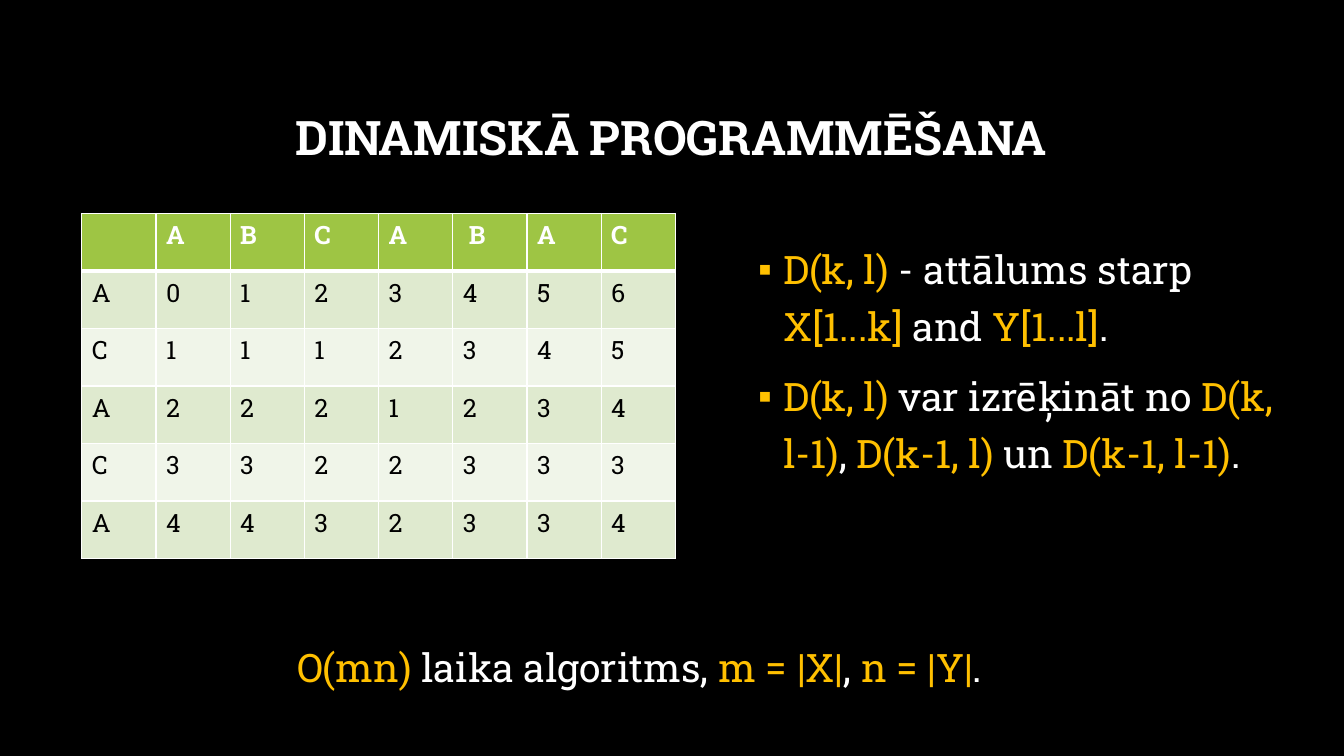
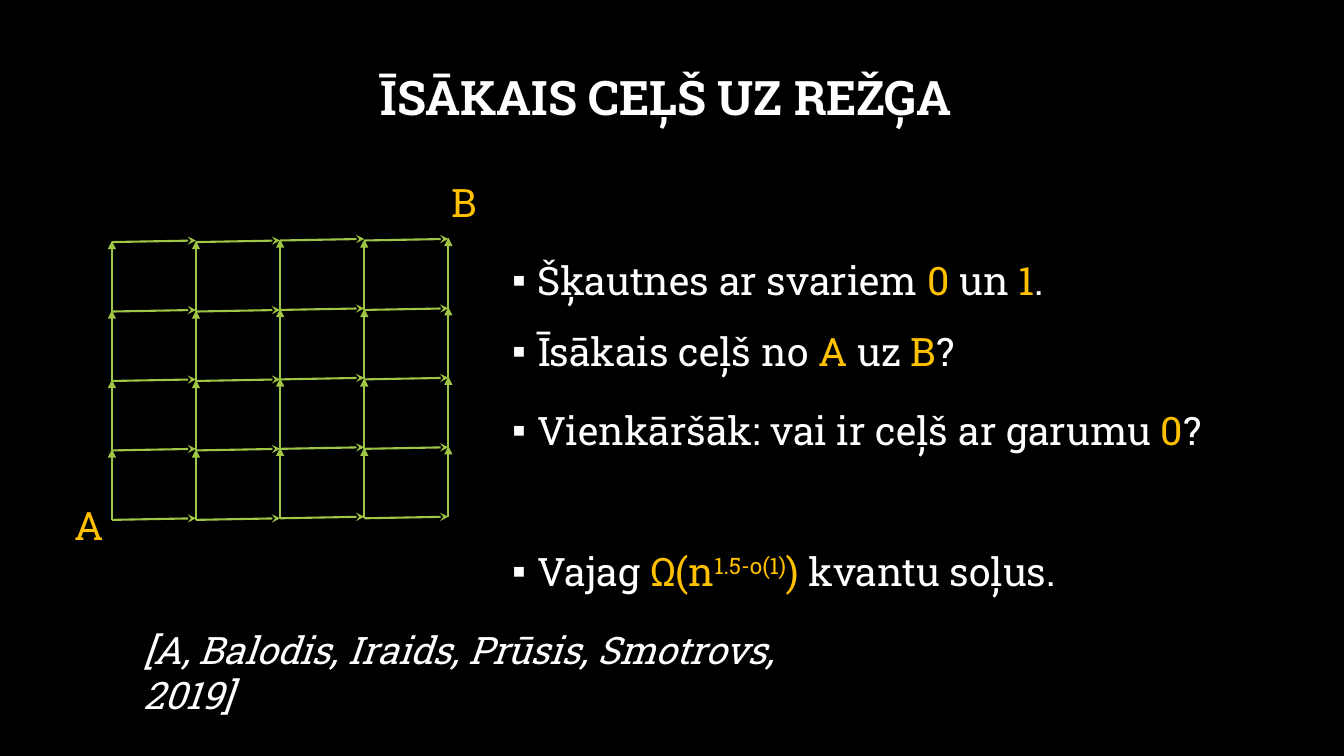
from dataclasses import dataclass
from itertools import product

from lxml.etree import SubElement
from pptx import Presentation
from pptx.dml.color import RGBColor
from pptx.enum.shapes import MSO_CONNECTOR
from pptx.enum.text import MSO_ANCHOR, MSO_AUTO_SIZE, PP_ALIGN
from pptx.oxml.ns import qn
from pptx.util import Cm, Pt


@dataclass(frozen=True)
class Theme:
    font: str = "Roboto Slab"
    background: str = "000000"
    text: str = "FFFFFF"
    accent: str = "FFC000"
    green: str = "9EC544"
    bands: tuple = ("DFEACF", "F0F5E9")
    title_size: int = 34
    body_size: int = 28
    citation_size: int = 27
    table_size: int = 18


THEME = Theme()
ACCENT_MARK, RAISED_MARK = "*", "^"

DISTANCE = {
    "title": "DINAMISKĀ PROGRAMMĒŠANA",
    "title_area": (2.54, 1.7, 28.75, 3.68),
    "bullets": [
        ("*D(k, l)* - attālums starp *X[1...k]* and *Y[1...l]*.", 10),
        ("*D(k, l)* var izrēķināt no *D(k, l-1)*, *D(k-1, l)* un *D(k-1, l-1)*.", 10),
    ],
    "bullet_color": THEME.accent,
    "body_area": (18.85, 5.82, 13.87, 10.26),
}
GRID_PATH = {
    "title": "ĪSĀKAIS CEĻŠ UZ REŽĢA",
    "title_area": (2.41, 0.69, 28.75, 3.68),
    "bullets": [
        ("Šķautnes ar svariem *0* un *1*.", 10),
        ("Īsākais ceļš no *A* uz *B*?", 10),
        ("Vienkāršāk: vai ir ceļš ar garumu *0*?", 16.5),
        ("Vajag *Ω(n^1.5-o(1)^)* kvantu soļus.", 60),
    ],
    "bullet_color": THEME.text,
    "body_area": (12.65, 6.1, 20.75, 10.3),
}

DISTANCE_TABLE = [
    ["", "A", "B", "C", "A", " B", "A", "C"],
    ["A", "0", "1", "2", "3", "4", "5", "6"],
    ["C", "1", "1", "1", "2", "3", "4", "5"],
    ["A", "2", "2", "2", "1", "2", "3", "4"],
    ["C", "3", "3", "2", "2", "3", "3", "3"],
    ["A", "4", "4", "3", "2", "3", "3", "4"],
]
TABLE_CORNER = (2.06, 5.38)
CELL_WIDTH, CELL_HEIGHT = 1.87, 1.45

RUNNING_TIME = ("*O(mn)* laika algoritms, *m = |X|*, *n = |Y|*.", (7.24, 16.08, 18.92, 1.45))
CORNER_LABELS = [
    ("*A*", (1.63, 12.5, 1.4, 1.45)),
    ("*B*", (11.13, 4.37, 1.4, 1.45)),
]
CITATION = ("[A, Balodis, Iraids, Prūsis, Smotrovs, 2019]", (3.53, 16.28, 17.4, 1.3))

GRID_CELLS = 4
GRID_LEFT, GRID_BOTTOM = 2.82, 13.1
COLUMN_STEP, ROW_STEP = 2.12, 1.75
ARROW_RISE, COLUMN_TILT = 1.78, 0.04


def set_values(target, **values):
    for name, value in values.items():
        setattr(target, name, value)


def place(shape, area):
    set_values(shape, **dict(zip(("left", "top", "width", "height"), map(Cm, area))))


def add_span(para, text, size, color, **values):
    span = para.add_run()
    span.text = text
    set_values(span.font, name=THEME.font, size=Pt(size), **values)
    span.font.color.rgb = RGBColor.from_string(color)
    return span


def write_marked(para, text, size, **values):
    for index, part in enumerate(text.split(ACCENT_MARK)):
        color = THEME.accent if index % 2 else THEME.text
        for level, piece in enumerate(part.split(RAISED_MARK)):
            if piece:
                span = add_span(para, piece, size, color, **values)
                if level % 2:
                    span.font._element.set("baseline", "30000")


def add_bullet(para, color):
    properties = para._p.get_or_add_pPr()
    indent = Cm(0.63)
    properties.set("marL", str(indent))
    properties.set("indent", str(-indent))
    SubElement(SubElement(properties, qn("a:buClr")), qn("a:srgbClr"), val=color)
    SubElement(properties, qn("a:buFont"), typeface="Arial")
    SubElement(properties, qn("a:buChar"), char="▪")


def add_page(deck, content):
    page = deck.slides.add_slide(deck.slide_layouts[1])
    title, body = page.placeholders
    place(title, content["title_area"])
    place(body, content["body_area"])
    set_values(title.text_frame, auto_size=MSO_AUTO_SIZE.NONE, vertical_anchor=MSO_ANCHOR.MIDDLE)
    set_values(body.text_frame, auto_size=MSO_AUTO_SIZE.NONE, vertical_anchor=MSO_ANCHOR.TOP)
    para = title.text_frame.paragraphs[0]
    set_values(para, alignment=PP_ALIGN.CENTER, line_spacing=0.9)
    add_span(para, content["title"], THEME.title_size, THEME.text, bold=True)
    for index, (text, space) in enumerate(content["bullets"]):
        para = body.text_frame.add_paragraph() if index else body.text_frame.paragraphs[0]
        set_values(para, line_spacing=1.2, space_before=Pt(space))
        add_bullet(para, content["bullet_color"])
        write_marked(para, text, THEME.body_size)
    return page


def add_text(page, text, area, size=THEME.body_size, frame_values=None, **values):
    box = page.shapes.add_textbox(*map(Cm, area))
    set_values(box.text_frame, word_wrap=True, **(frame_values or {}))
    write_marked(box.text_frame.paragraphs[0], text, size, **values)


def add_border(cell, side, width):
    line = SubElement(cell._tc.get_or_add_tcPr(), qn(f"a:ln{side}"), w=str(Pt(width)))
    SubElement(SubElement(line, qn("a:solidFill")), qn("a:srgbClr"), val=THEME.text)


def add_distance_table(page):
    rows, columns = len(DISTANCE_TABLE), len(DISTANCE_TABLE[0])
    area = (*TABLE_CORNER, columns * CELL_WIDTH, rows * CELL_HEIGHT)
    table = page.shapes.add_table(rows, columns, *map(Cm, area)).table
    for row, column in product(range(rows), range(columns)):
        cell = table.cell(row, column)
        header = row == 0
        widths = {"L": 1, "R": 1, "T": 3 if row == 1 else 1, "B": 3 if header else 1}
        for side, width in widths.items():
            add_border(cell, side, width)
        fill = THEME.green if header else THEME.bands[(row - 1) % 2]
        cell.fill.solid()
        cell.fill.fore_color.rgb = RGBColor.from_string(fill)
        text = DISTANCE_TABLE[row][column]
        if text:
            color = THEME.text if header else THEME.background
            add_span(cell.text_frame.paragraphs[0], text, THEME.table_size, color, bold=header)


def add_arrow(page, start, end, head):
    arrow = page.shapes.add_connector(MSO_CONNECTOR.STRAIGHT, *map(Cm, (*start, *end)))
    arrow.line.width = Pt(1.5)
    arrow.line.color.rgb = RGBColor.from_string(THEME.green)
    properties = arrow._element.spPr
    SubElement(properties.find(qn("a:ln")), qn("a:tailEnd"), type=head)
    SubElement(properties, qn("a:effectLst"))


def add_grid(page):
    for column, row in product(range(GRID_CELLS + 1), repeat=2):
        x = GRID_LEFT + column * COLUMN_STEP
        y = GRID_BOTTOM - row * ROW_STEP - column // 2 * COLUMN_TILT
        if column < GRID_CELLS:
            add_arrow(page, (x, y), (x + COLUMN_STEP, y - COLUMN_TILT), "stealth")
        if row < GRID_CELLS:
            add_arrow(page, (x, y), (x, y - ARROW_RISE), "triangle")


def main():
    deck = Presentation()
    set_values(deck, slide_width=Cm(33.87), slide_height=Cm(19.05))
    background = deck.slide_master.background.fill
    background.solid()
    background.fore_color.rgb = RGBColor.from_string(THEME.background)

    page = add_page(deck, DISTANCE)
    add_distance_table(page)
    add_text(page, *RUNNING_TIME)

    page = add_page(deck, GRID_PATH)
    add_grid(page)
    for text, area in CORNER_LABELS:
        add_text(page, text, area)
    sides = ("left", "right", "top", "bottom")
    frame_values = {f"margin_{side}": Cm(0.08) for side in sides}
    frame_values["vertical_anchor"] = MSO_ANCHOR.MIDDLE
    add_text(page, *CITATION, THEME.citation_size, frame_values, italic=True)

    deck.save("out.pptx")


if __name__ == "__main__":
    main()
